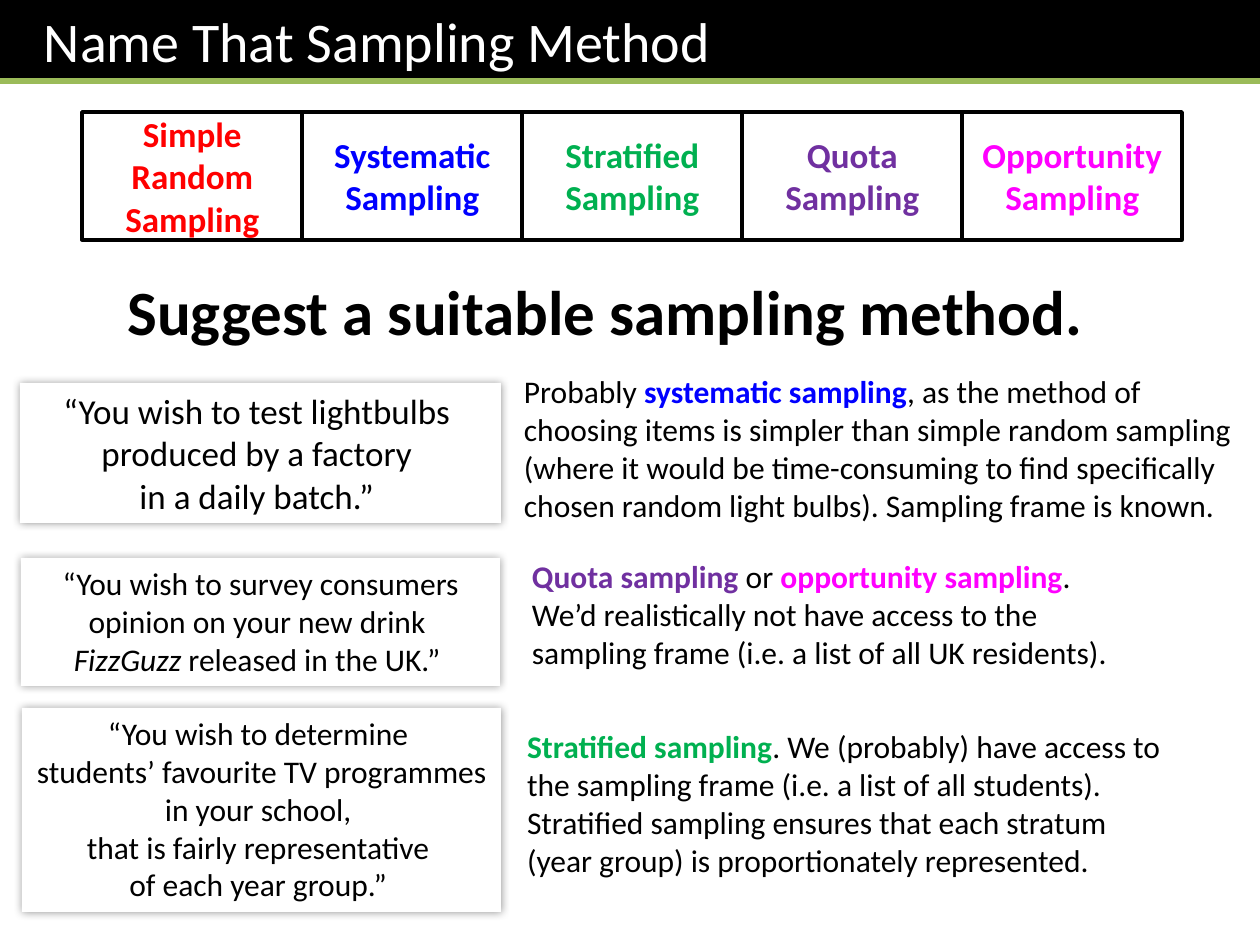
from pptx import Presentation
from pptx.dml.color import RGBColor as RGB
from pptx.enum.shapes import MSO_CONNECTOR as CONN, MSO_SHAPE as SHAPE
from pptx.enum.text import MSO_ANCHOR as ANCHOR, MSO_AUTO_SIZE as AUTO, PP_ALIGN as ALIGN
from pptx.util import Emu, Pt
from lxml import etree

PX = 914400 / 126
A = "http://schemas.openxmlformats.org/drawingml/2006/main"
THEME = {
    "font": "Calibri",
    "black": "000000", "white": "FFFFFF", "rule": "9BBB59",
    "random": "FF0000", "systematic": "0000FF", "stratified": "00B050",
    "quota": "7030A0", "opportunity": "FF00FF",
    "title": 32, "prompt": 36, "large": 20, "body": 18,
}


def px(*lengths):
    return [Emu(round(v * PX)) for v in lengths]


def add_text(shapes, box, paras, size, fill=None, border=None, align=ALIGN.LEFT,
             anchor=ANCHOR.TOP, grow=True, left=13):
    if fill:
        sp = shapes.add_shape(SHAPE.RECTANGLE, *px(*box))
        sp.shadow.inherit = False
        sp.fill.solid()
        sp.fill.fore_color.rgb = RGB.from_string(THEME[fill])
        if border:
            sp.line.color.rgb = RGB.from_string(THEME["black"])
            sp.line.width = Pt(border)
        else:
            sp.line.fill.background()
    else:
        sp = shapes.add_textbox(*px(*box))
    tf = sp.text_frame
    frame = {"word_wrap": True, "vertical_anchor": anchor, "margin_left": px(left)[0],
             "auto_size": AUTO.SHAPE_TO_FIT_TEXT if grow else AUTO.NONE}
    for name, value in frame.items():
        setattr(tf, name, value)
    for i, runs in enumerate(paras):
        p = tf.paragraphs[0] if i == 0 else tf.add_paragraph()
        p.alignment = align
        for text, color, style in runs:
            r = p.add_run()
            r.text = text
            r.font.color.rgb = RGB.from_string(THEME[color])
            font = {"name": THEME["font"], "size": Pt(THEME[size]),
                    "bold": style == "bold", "italic": style == "italic"}
            for name, value in font.items():
                setattr(r.font, name, value)
    return sp


prs = Presentation()
prs.slide_width, prs.slide_height = px(1260, 945)
s = prs.slides.add_slide(prs.slide_layouts[6])

header = s.shapes.add_group_shape().shapes
add_text(header, (0, 0, 1260, 83), [[("Name That Sampling Method", "white", None)]],
         "title", fill="black", left=44)
rule = header.add_connector(CONN.STRAIGHT, *px(0, 81, 1260, 81))
rule.line.color.rgb = RGB.from_string(THEME["rule"])
rule.line.width = Pt(3)
etree.SubElement(rule._element.spPr, f"{{{A}}}effectLst")

add_text(s.shapes, (38, 266, 1134, 89),
         [[("Suggest a suitable sampling method.", "black", "bold")]],
         "prompt", align=ALIGN.CENTER)

methods = [
    ("random", ["Simple Random Sampling"]),
    ("systematic", ["Systematic Sampling"]),
    ("stratified", ["Stratified Sampling"]),
    ("quota", ["Quota", "Sampling"]),
    ("opportunity", ["Opportunity", "Sampling"]),
]
strip = s.shapes.add_group_shape().shapes
for i, (color, lines) in enumerate(methods):
    add_text(strip, (82 + 220 * i, 112, 220, 128),
             [[(line, color, "bold")] for line in lines], "large", fill="white",
             border=2, align=ALIGN.CENTER, anchor=ANCHOR.MIDDLE, grow=False)

scenarios = [
    ((20, 383, 481, 140), "large", [
        [("“You wish to test lightbulbs ", "black", None)],
        [("produced by a factory ", "black", None)],
        [("in a daily batch.” ", "black", None)]]),
    ((21, 558, 479, 128), "body", [
        [("“You wish to survey consumers opinion on your new drink ", "black", None)],
        [("FizzGuzz ", "black", "italic"), ("released in the UK.” ", "black", None)]]),
    ((22, 708, 479, 204), "body", [
        [("“You wish to determine ", "black", None)],
        [("students’ favourite TV programmes in your school, ", "black", None)],
        [("that is fairly representative ", "black", None)],
        [("of each year group.” ", "black", None)]]),
]
for box, size, paras in scenarios:
    sp = add_text(s.shapes, box, paras, size, fill="white", align=ALIGN.CENTER,
                  anchor=ANCHOR.MIDDLE if size == "large" else ANCHOR.TOP)
    effects = sp._element.spPr.find(f"{{{A}}}effectLst")
    shadow = etree.SubElement(effects, f"{{{A}}}outerShdw", blurRad=str(Pt(5)),
                              dist="0", dir="0", algn="ctr", rotWithShape="0")
    tint = etree.SubElement(shadow, f"{{{A}}}srgbClr", val=THEME["black"])
    etree.SubElement(tint, f"{{{A}}}alpha", val="40000")

answers = [
    ((511, 366, 745, 165), [
        ("Probably ", "black", None),
        ("systematic sampling", "systematic", "bold"),
        (", as the method of choosing items is simpler than simple random sampling "
         "(where it would be time-consuming to find specifically chosen random light "
         "bulbs). Sampling frame is known.", "black", None)]),
    ((519, 551, 604, 127), [
        ("Quota sampling ", "quota", "bold"),
        ("or ", "black", None),
        ("opportunity sampling", "opportunity", "bold"),
        (". We’d realistically not have access to the sampling frame "
         "(i.e. a list of all UK residents).", "black", None)]),
    ((514, 721, 675, 165), [
        ("Stratified sampling", "stratified", "bold"),
        (". We (probably) have access to the sampling frame (i.e. a list of all "
         "students). Stratified sampling ensures that each stratum (year group) is "
         "proportionately represented.", "black", None)]),
]
for box, runs in answers:
    add_text(s.shapes, box, [runs], "body")

prs.save("out.pptx")
